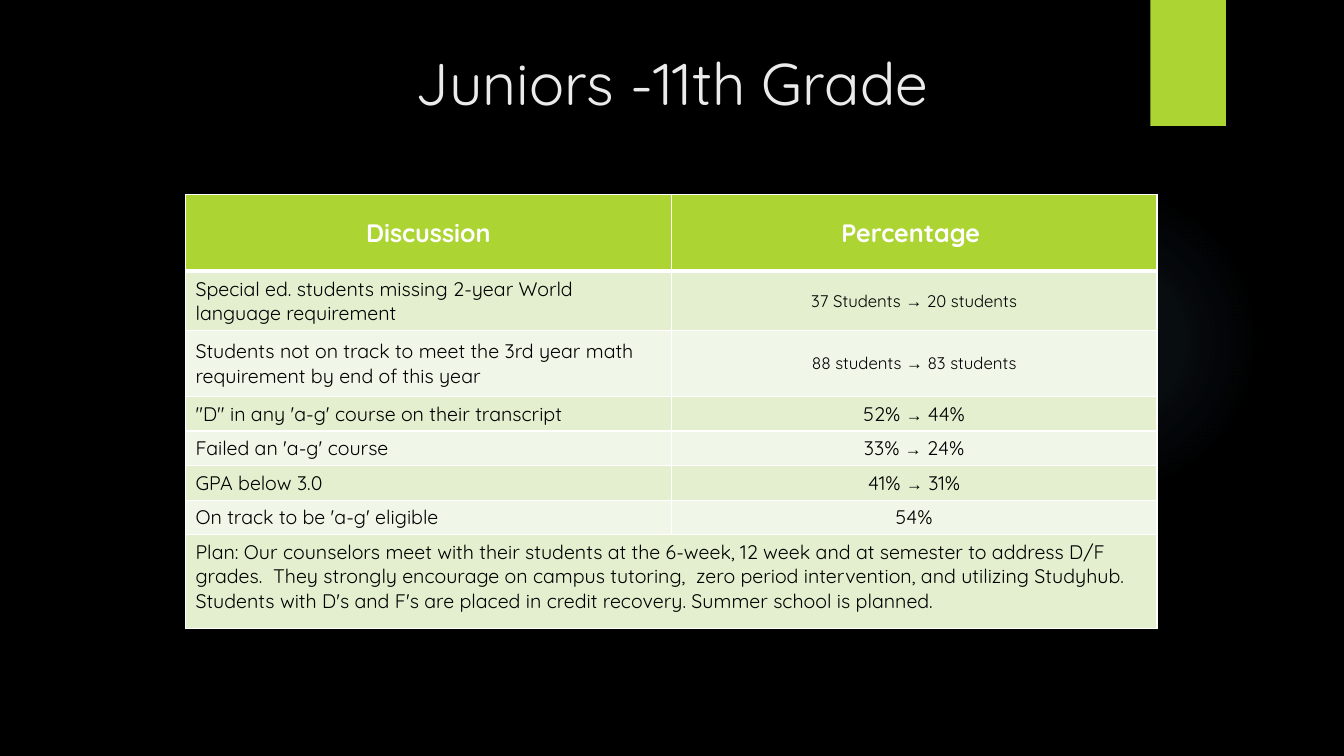
from lxml import etree
from pptx import Presentation
from pptx.dml.color import RGBColor
from pptx.enum.shapes import MSO_SHAPE as Shape
from pptx.enum.text import MSO_ANCHOR as Anchor, PP_ALIGN as Align
from pptx.oxml import parse_xml
from pptx.oxml.ns import nsdecls, qn
from pptx.util import Pt

BLACK = RGBColor(0x00, 0x00, 0x00)
WHITE = RGBColor(0xFF, 0xFF, 0xFF)
TITLE_GRAY = RGBColor(0xEB, 0xEB, 0xEB)
LIME = RGBColor(0xAC, 0xD4, 0x33)
PALE_LIME = RGBColor(0xE3, 0xEF, 0xCE)
PALEST_LIME = RGBColor(0xF1, 0xF7, 0xE8)
GLOW_BLUE = RGBColor(0x7A, 0xC4, 0xF0)

FONT = "Quicksand"
ARROW = "→"
ARROW_FONT = "Times New Roman"
ARROW_SIZE = 12

HEADINGS = ("Discussion", "Percentage ")
# discussion, percentage, size of the percentage text
TOPICS = [
    ("Special ed. students missing 2-year World language requirement",
     "37 Students → 20 students", 12),
    ("Students not on track to meet the 3rd year math requirement "
     "by end of this year", "88 students → 83 students", 12),
    ("\"D\" in any 'a-g' course on their transcript", "52% → 44%", 14),
    ("Failed an 'a-g' course", "33% → 24%", 14),
    ("GPA below 3.0", "41% → 31%", 14),
    ("On track to be 'a-g' eligible", "54%", 14),
]
PLAN = ("Plan: Our counselors meet with their students at the 6-week, 12 week "
        "and at semester to address D/F grades.  They strongly encourage on "
        "campus tutoring,  zero period intervention, and utilizing Studyhub. "
        "Students with D's and F's are placed in credit recovery. "
        "Summer school is planned.")
ROW_HEIGHTS = (54.7, 42.5, 47, 24.7, 24.7, 24.7, 24.7, 67)
COLUMN_WIDTH = 347


def write_text(frame, text, size=14, color=BLACK, bold=False, align=Align.LEFT):
    """Fill the frame with one paragraph; an arrow gets its own font."""
    para = frame.paragraphs[0]
    para.alignment = align
    for piece in filter(None, text.partition(ARROW)):
        span = para.add_run()
        span.text = piece
        font = span.font
        is_arrow = piece == ARROW
        font.name = ARROW_FONT if is_arrow else FONT
        font.size = Pt(ARROW_SIZE if is_arrow else size)
        font.bold = bold
        font.color.rgb = color


def add_plain_shape(page, kind, left, top, width, height, color):
    shape = page.shapes.add_shape(kind, Pt(left), Pt(top), Pt(width), Pt(height))
    shape.shadow.inherit = False
    shape.fill.solid()
    shape.fill.fore_color.rgb = color
    shape.line.fill.background()
    return shape


def add_glow(page, left, top, size, color, stops):
    """Circle that fades outward; stops are (position, opacity) in percent."""
    glow = add_plain_shape(page, Shape.OVAL, left, top, size, size, color)
    stop_xml = "".join(
        f'<a:gs pos="{position * 1000}"><a:srgbClr val="{color}">'
        f'<a:alpha val="{opacity * 1000}"/></a:srgbClr></a:gs>'
        for position, opacity in stops)
    gradient = parse_xml(
        f'<a:gradFill {nsdecls("a")}><a:gsLst>{stop_xml}</a:gsLst>'
        '<a:path path="circle"><a:fillToRect l="50000" t="50000" '
        'r="50000" b="50000"/></a:path></a:gradFill>')
    properties = glow.element.spPr
    properties.replace(properties.find(qn("a:solidFill")), gradient)


def add_title(page, text):
    box = page.shapes.add_textbox(Pt(109.4), Pt(29.5), Pt(741), Pt(110))
    box.text_frame.word_wrap = True
    write_text(box.text_frame, text, size=42, color=TITLE_GRAY,
               align=Align.CENTER)


def style_cell(cell, fill, top=1, bottom=1):
    """Set white borders, with the given top and bottom widths, and the fill."""
    properties = cell._tc.get_or_add_tcPr()
    for side, width in (("L", 1), ("R", 1), ("T", top), ("B", bottom)):
        line = etree.SubElement(properties, qn(f"a:ln{side}"), w=str(Pt(width)))
        solid = etree.SubElement(line, qn("a:solidFill"))
        etree.SubElement(solid, qn("a:srgbClr"), val=str(WHITE))
    cell.fill.solid()
    cell.fill.fore_color.rgb = fill
    cell.vertical_anchor = Anchor.MIDDLE


def add_grade_table(page):
    row_count = len(ROW_HEIGHTS)
    table = page.shapes.add_table(
        row_count, 2, Pt(132.5), Pt(139), Pt(2 * COLUMN_WIDTH),
        Pt(sum(ROW_HEIGHTS))).table
    for column in table.columns:
        column.width = Pt(COLUMN_WIDTH)
    for index, height in enumerate(ROW_HEIGHTS):
        table.rows[index].height = Pt(height)
        fill = PALE_LIME if index % 2 else PALEST_LIME
        for cell in table.rows[index].cells:
            style_cell(cell, LIME if index == 0 else fill,
                       top=3 if index == 1 else 1,
                       bottom=3 if index == 0 else 1)

    for column, heading in enumerate(HEADINGS):
        write_text(table.cell(0, column).text_frame, heading, size=18,
                   color=WHITE, bold=True, align=Align.CENTER)
    for row, (topic, percentage, size) in enumerate(TOPICS, start=1):
        write_text(table.cell(row, 0).text_frame, topic)
        write_text(table.cell(row, 1).text_frame, percentage, size=size,
                   align=Align.CENTER)

    plan_cell = table.cell(row_count - 1, 0)
    plan_cell.merge(table.cell(row_count - 1, 1))
    plan_cell.vertical_anchor = Anchor.TOP
    write_text(plan_cell.text_frame, PLAN)


def main():
    deck = Presentation()
    deck.slide_width, deck.slide_height = Pt(960), Pt(540)
    page = deck.slides.add_slide(deck.slide_layouts[6])
    page.background.fill.solid()
    page.background.fill.fore_color.rgb = BLACK

    add_glow(page, 677.5, 131.8, 221.8, GLOW_BLUE, [(0, 7), (36, 6), (69, 0)])
    add_plain_shape(page, Shape.RECTANGLE, 821.7, 0, 54, 90, LIME)
    add_title(page, "Juniors -11th Grade")
    add_grade_table(page)
    deck.save("out.pptx")


if __name__ == "__main__":
    main()
